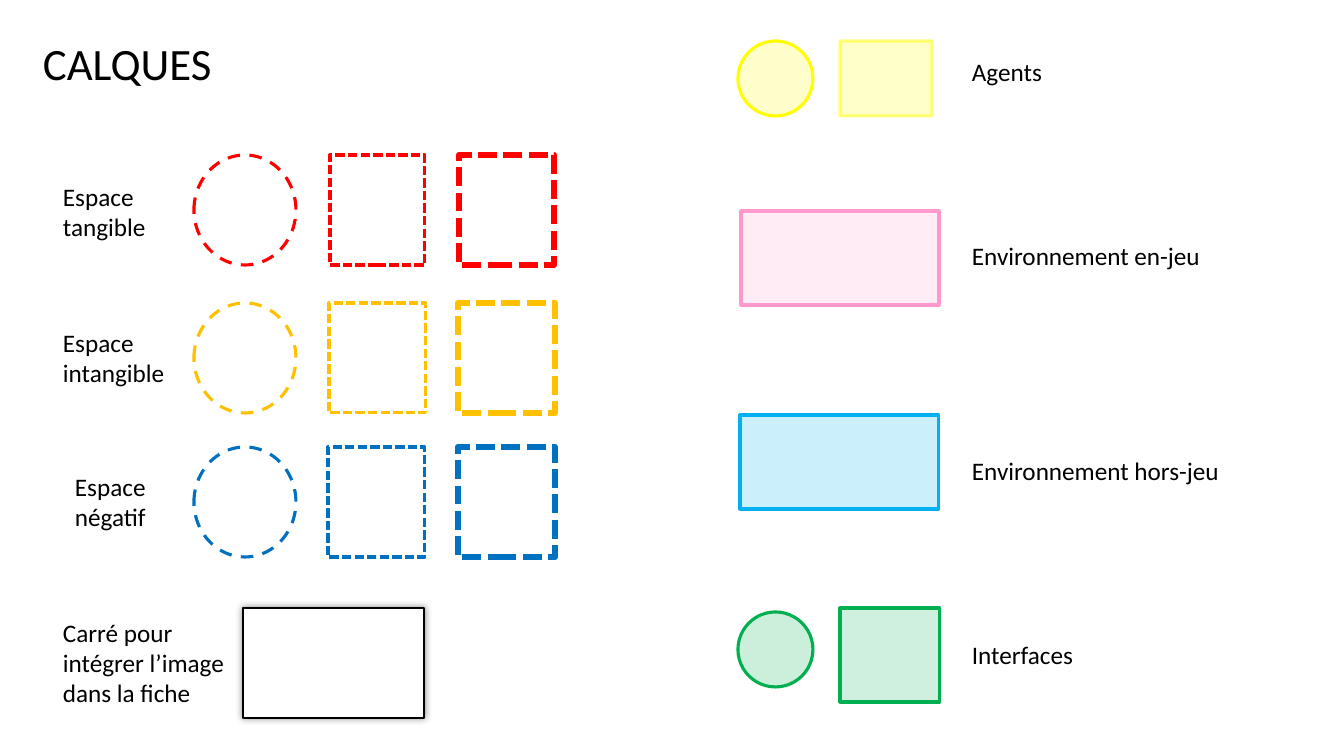
"""Build the CALQUES slide: a key of outlines, fills and labels for layers."""
from dataclasses import dataclass

from lxml import etree
from pptx import Presentation
from pptx import util as u
from pptx.dml.color import RGBColor
from pptx.enum import dml, shapes, text
from pptx.oxml.ns import qn

EMU_PER_PX = 914400 / 100.8
RECTANGLE = shapes.MSO_SHAPE.RECTANGLE
OVAL = shapes.MSO_SHAPE.OVAL
DASH = dml.MSO_LINE.DASH
SHORT_DASH = dml.MSO_LINE.SQUARE_DOT


@dataclass(frozen=True)
class Theme:
    font: str = "Calibri"
    title_size: int = 32
    body_size: int = 18
    line_height: int = 22
    frame_line: float = 1.5
    thin_line: float = 2.25
    thick_line: float = 4.5
    black: str = "000000"
    white: str = "FFFFFF"
    red: str = "FF0000"
    amber: str = "FFC000"
    blue: str = "0070C0"
    yellow: str = "FFFF00"
    pink: str = "FF99CC"
    sky: str = "00B0F0"
    green: str = "00B050"


def px(length):
    return u.Emu(round(length * EMU_PER_PX))


class LayerSlide:
    def __init__(self, slide, theme):
        self.slide = slide
        self.theme = theme

    def label(self, box, paragraphs, size=None, wrap=True, blank_lines=None):
        frame = self.slide.shapes.add_textbox(*map(px, box)).text_frame
        frame.word_wrap = wrap
        frame.auto_size = text.MSO_AUTO_SIZE.SHAPE_TO_FIT_TEXT
        frame.text = "\n".join(paragraphs)
        for paragraph in frame.paragraphs:
            paragraph.font.name = self.theme.font
            paragraph.font.size = u.Pt(size or self.theme.body_size)
            paragraph.font.color.rgb = RGBColor.from_string(self.theme.black)
        for paragraph, lines in zip(frame.paragraphs[1:], blank_lines or ()):
            paragraph.space_before = u.Pt(lines * self.theme.line_height)

    def figure(self, kind, box, color, width=None, dash=None, fill=None,
               fill_opacity=100, line_opacity=100):
        shape = self.slide.shapes.add_shape(kind, *map(px, box))
        shape.shadow.inherit = False
        shape.line.color.rgb = RGBColor.from_string(color)
        shape.line.width = u.Pt(width or self.theme.thin_line)
        if dash:
            shape.line.dash_style = dash
        if fill:
            shape.fill.solid()
            shape.fill.fore_color.rgb = RGBColor.from_string(fill)
            self.opacity(shape, "a:solidFill/a:srgbClr", fill_opacity)
        else:
            shape.fill.background()
        self.opacity(shape, "a:ln/a:solidFill/a:srgbClr", line_opacity)
        return shape

    def opacity(self, shape, color_path, percent):
        if percent < 100:
            color = shape.element.spPr.xpath(color_path)[0]
            etree.SubElement(color, qn("a:alpha"), val=str(percent * 1000))

    def image_frame(self, box):
        shape = self.figure(RECTANGLE, box, self.theme.black,
                            self.theme.frame_line, fill=self.theme.white)
        effects = shape.element.spPr.find(qn("a:effectLst"))
        shadow = etree.SubElement(effects, qn("a:outerShdw"),
                                  blurRad=str(u.Pt(5)), dist="0", dir="0")
        color = etree.SubElement(shadow, qn("a:srgbClr"), val=self.theme.black)
        etree.SubElement(color, qn("a:alpha"), val="40000")

    def space_row(self, top, color, thin_left, thick_left, width):
        height = 110
        self.figure(OVAL, (194, top, 102, height), color, dash=DASH)
        self.figure(RECTANGLE, (thin_left, top, width, height), color, dash=SHORT_DASH)
        self.figure(RECTANGLE, (thick_left, top, width, height), color,
                    self.theme.thick_line, SHORT_DASH)

    def tinted(self, kind, box, color, fill_opacity, line_opacity=100):
        self.figure(kind, box, color, fill=color, fill_opacity=fill_opacity,
                    line_opacity=line_opacity)


def main():
    theme = Theme()
    presentation = Presentation()
    presentation.slide_width, presentation.slide_height = px(1344), px(756)
    layers = LayerSlide(presentation.slides.add_slide(presentation.slide_layouts[6]), theme)

    layers.label((33, 31, 191, 65), ["CALQUES"], theme.title_size, wrap=False)

    layers.space_row(155, theme.red, 330, 459, 95)
    layers.space_row(303, theme.amber, 329, 458, 97)
    layers.space_row(447, theme.blue, 328, 458, 97)
    layers.label((53, 176, 129, 72), ["Espace tangible"])
    layers.label((53, 322, 129, 72), ["Espace intangible"])
    layers.label((65, 466, 129, 72), ["Espace négatif"])

    layers.image_frame((243, 608, 181, 110))
    layers.label((53, 612, 190, 102), ["Carré pour intégrer l’image dans la fiche"])

    layers.tinted(OVAL, (738, 41, 75, 75), theme.yellow, 20)
    layers.tinted(RECTANGLE, (840, 41, 92, 75), theme.yellow, 21, line_opacity=50)
    layers.tinted(RECTANGLE, (741, 211, 198, 94), theme.pink, 18)
    layers.tinted(RECTANGLE, (740, 415, 199, 94), theme.sky, 20)
    layers.tinted(OVAL, (738, 612, 75, 75), theme.green, 20)
    layers.tinted(RECTANGLE, (840, 608, 100, 94), theme.green, 19)
    layers.label((962, 51, 270, 651),
                 ["Agents", "Environnement en-jeu", "Environnement hors-jeu", "Interfaces"],
                 wrap=False, blank_lines=(5, 6, 5))

    presentation.save("out.pptx")


if __name__ == "__main__":
    main()
